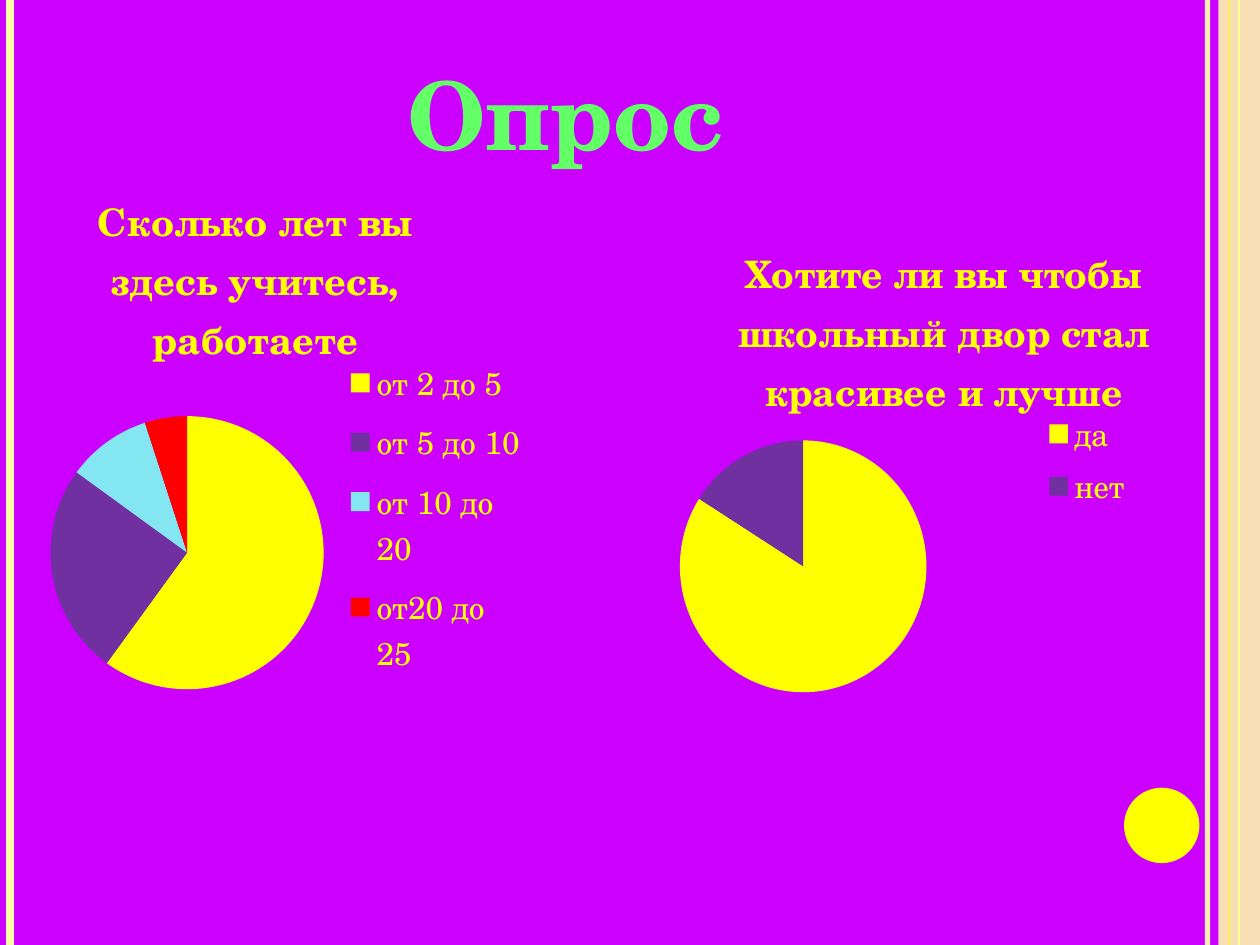
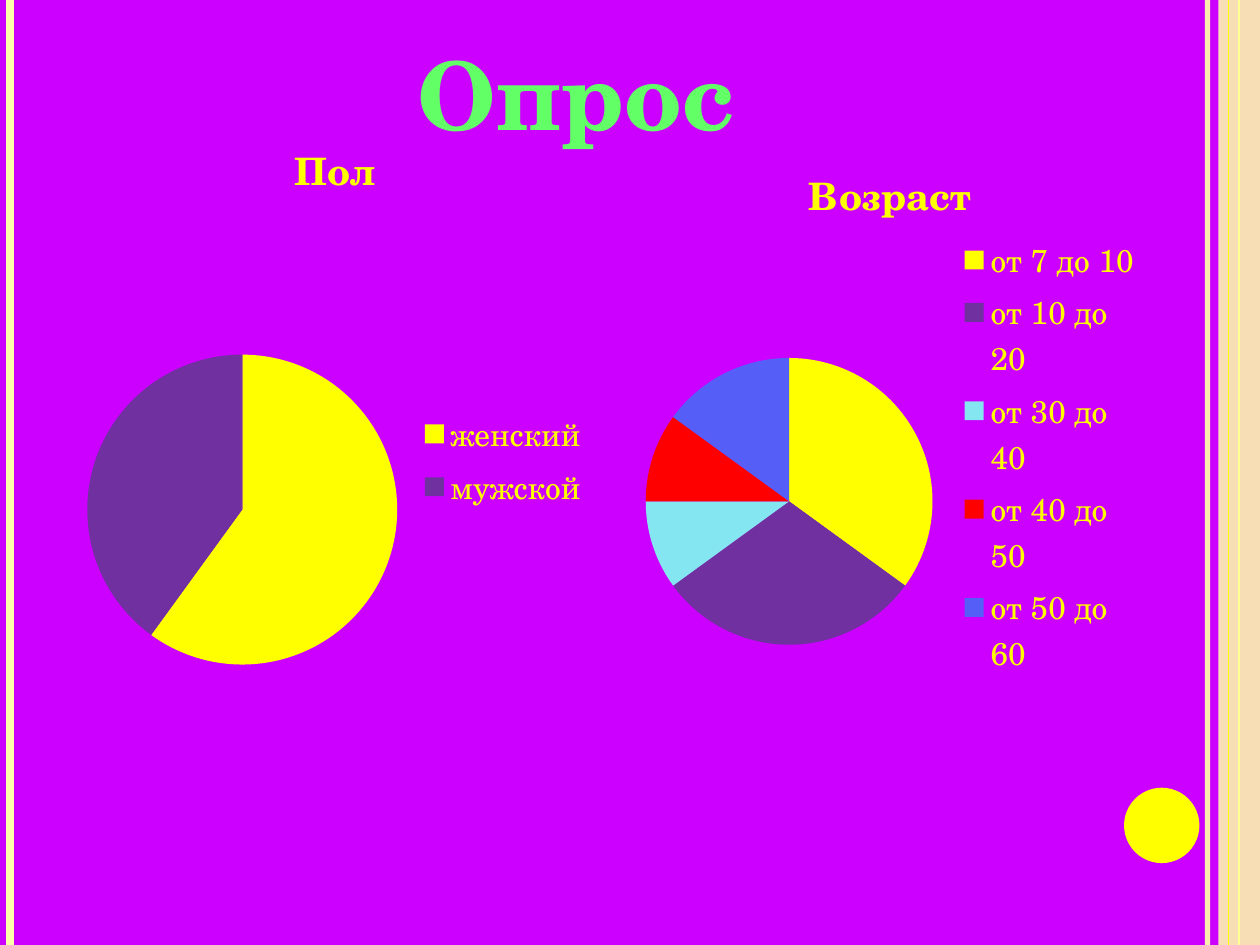
from dataclasses import dataclass
from typing import Optional

from lxml.etree import SubElement
from pptx import Presentation
from pptx.chart.chart import Chart
from pptx.chart.data import CategoryChartData as PieData
from pptx.dml.color import RGBColor
from pptx.dml.fill import FillFormat
from pptx.enum.chart import XL_CHART_TYPE as Kind, XL_LEGEND_POSITION as Side
from pptx.enum.shapes import MSO_CONNECTOR as Link, MSO_SHAPE as Form
from pptx.enum.text import MSO_ANCHOR as Anchor, PP_ALIGN as Align
from pptx.oxml.ns import qn
from pptx.oxml.xmlchemy import OxmlElement as Node
from pptx.slide import Slide
from pptx.text.text import Font
from pptx.util import Cm, Pt

FACE = "TeX Gyre Schola"
BACK, CREAM, YELLOW, GREEN = "CC00FF", "FFFFAB", "FFFF00", "63FF67"
SLICES = [YELLOW, "7030A0", "84E6F0", "FF0000", "565EF8"]
WIDE, HIGH = 25.4, 19.05


@dataclass(frozen=True)
class Stripe:
    left: float
    width: float
    color: str
    alpha: Optional[int] = None


@dataclass(frozen=True)
class Pie:
    title: str
    data: dict[str, int]
    box: tuple[float, float, float, float]
    head: tuple[float, float]
    plot: tuple[float, float, float, float]
    key: tuple[float, float, float, float]


@dataclass(frozen=True)
class Page:
    left: float
    top: float
    pies: list[Pie]


STRIPES = [
    Stripe(24.34, 3, CREAM, 93),
    Stripe(0.21, 4.5, CREAM),
    Stripe(24.98, 1.5, YELLOW),
]
INNER = Stripe(24.77, 0.75, YELLOW)

PAGES = [
    Page(7.94, 1.01, [
        Pie("Сколько лет вы здесь учитесь, работаете",
            {"от 2 до 5": 60, "от 5 до 10": 25, "от 10 до 20": 10, "от20 до 25": 5},
            (0.71, 3.53, 10.21, 10.8), (0.11, 0.01),
            (0.03, 0.45, 0.54, 0.51), (0.62, 0.32, 0.34, 0.64)),
        Pie("Хотите ли вы чтобы школьный двор стал красивее и лучше",
            {"да": 84, "нет": 16},
            (11.51, 4.17, 11.81, 10.21), (0.28, 0.05),
            (0.19, 0.46, 0.43, 0.5), (0.81, 0.39, 0.18, 0.22)),
    ]),
    Page(8.15, 0.6, [
        Pie("Пол", {"женский": 60, "мужской": 40},
            (1.4, 2.18, 10.72, 14.2), (0.41, 0.03),
            (0.03, 0.35, 0.59, 0.44), (0.65, 0.42, 0.33, 0.16)),
        Pie("Возраст",
            {"от 7 до 10": 35, "от 10 до 20": 30, "от 30 до 40": 10,
             "от 40 до 50": 10, "от 50 до 60": 15},
            (12.7, 2.72, 10.52, 12.85), (0.33, 0.03),
            (0.03, 0.35, 0.55, 0.45), (0.64, 0.15, 0.34, 0.71)),
    ]),
]


def paint(fill: FillFormat, color: str, alpha: Optional[int] = None) -> None:
    fill.solid()
    fill.fore_color.rgb = RGBColor.from_string(color)
    if alpha is not None:
        tone = fill._xPr.find(qn("a:solidFill"))[0]
        SubElement(tone, qn("a:alpha")).set("val", str(alpha * 1000))


def style(font: Font, size: float, color: str, bold: bool = False) -> None:
    font.name, font.size, font.bold = FACE, Pt(size), bold
    paint(font.fill, color)


def add_form(slide: Slide, form: Form, box: tuple[float, ...], color: str,
             alpha: Optional[int] = None) -> None:
    shape = slide.shapes.add_shape(form, *map(Cm, box))
    shape.shadow.inherit = False
    shape.line.fill.background()
    paint(shape.fill, color, alpha)


def add_stripe(slide: Slide, stripe: Stripe) -> None:
    x = Cm(stripe.left)
    line = slide.shapes.add_connector(Link.STRAIGHT, x, 0, x, Cm(HIGH))
    line.line.width = Pt(stripe.width)
    paint(line.line.fill, stripe.color, stripe.alpha)
    line.element.spPr.append(Node("a:effectLst"))


def add_frame(slide: Slide) -> None:
    for stripe in STRIPES:
        add_stripe(slide, stripe)
    add_form(slide, Form.RECTANGLE, (24.56, 0, 0.84, HIGH), CREAM, 87)
    add_stripe(slide, INNER)
    add_form(slide, Form.OVAL, (22.66, 15.88, 1.52, 1.52), YELLOW)


def add_title(slide: Slide, left: float, top: float) -> None:
    title = slide.shapes.title
    title.left, title.top, title.width, title.height = map(Cm, (left, top, 6.93, 2.57))
    frame = title.text_frame
    frame.word_wrap = False
    frame.vertical_anchor = Anchor.TOP
    para = frame.paragraphs[0]
    para.alignment = Align.CENTER
    run = para.add_run()
    run.text = "Опрос"
    style(run.font, 54, GREEN, True)


def place(chart: Chart, tag: str, after: Optional[str], spot: tuple[float, ...]) -> None:
    part = chart.element.find(".//" + qn(tag))
    for old in part.findall(qn("c:layout")):
        part.remove(old)
    layout = Node("c:layout")
    manual = SubElement(layout, qn("c:manualLayout"))
    if tag == "c:plotArea":
        SubElement(manual, qn("c:layoutTarget")).set("val", "inner")
    for name in ("xMode", "yMode"):
        SubElement(manual, qn("c:" + name)).set("val", "edge")
    for name, value in zip("xywh", spot):
        SubElement(manual, qn("c:" + name)).set("val", str(value))
    if after:
        part.find(qn(after)).addnext(layout)
    else:
        part.insert(0, layout)


def add_pie(slide: Slide, pie: Pie) -> None:
    data = PieData()
    data.categories = list(pie.data)
    data.add_series(pie.title, list(pie.data.values()))
    chart = slide.shapes.add_chart(Kind.PIE, *map(Cm, pie.box), data).chart
    style(chart.font, 18, YELLOW)

    chart.has_title = True
    run = chart.chart_title.text_frame.paragraphs[0].add_run()
    run.text = pie.title
    style(run.font, 21.6, YELLOW, True)

    chart.has_legend = True
    chart.legend.position = Side.RIGHT
    chart.legend.include_in_layout = False
    style(chart.legend.font, 18, YELLOW)

    plot = chart.plots[0]
    plot.vary_by_categories = True
    for index, color in zip(range(len(pie.data)), SLICES):
        paint(plot.series[0].points[index].format.fill, color)

    place(chart, "c:title", "c:tx", pie.head)
    place(chart, "c:plotArea", None, pie.plot)
    place(chart, "c:legend", "c:legendPos", pie.key)


def main() -> None:
    deck = Presentation()
    deck.slide_width, deck.slide_height = Cm(WIDE), Cm(HIGH)
    paint(deck.slide_master.background.fill, BACK)
    for page in PAGES:
        slide = deck.slides.add_slide(deck.slide_layouts[5])
        add_frame(slide)
        for pie in page.pies:
            add_pie(slide, pie)
        add_title(slide, page.left, page.top)
    deck.save("out.pptx")


if __name__ == "__main__":
    main()
